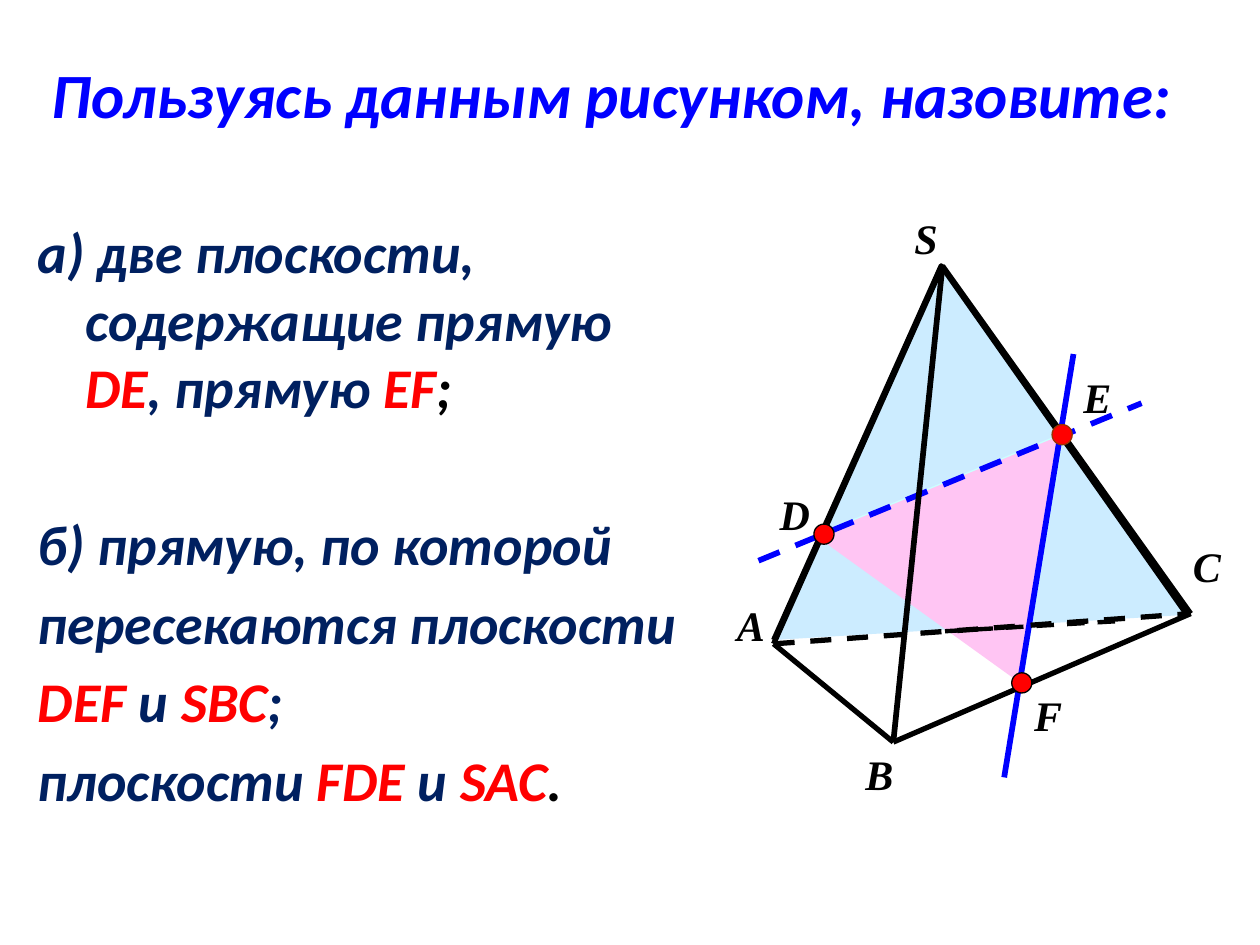
import pptx
import pptx.util
import pptx.dml.color
import pptx.enum.dml
import pptx.enum.shapes
import pptx.enum.text
import lxml.etree

theme = {
    "sans": "Calibri", "serif": "Times New Roman",
    "title": 36, "body": 32, "label": 24,
    "blue": "0000FF", "navy": "002060", "red": "FF0000", "black": "000000",
    "face": "CCECFF", "section": "FFC5F3", "rim": "CCFFFF", "brown": "993300",
}

deck = pptx.Presentation()
deck.slide_width = pptx.util.Inches(10)
deck.slide_height = pptx.util.Inches(7.5)
column = deck.slide_width / 100
row = deck.slide_height / 75
page = deck.slides.add_slide(deck.slide_layouts[1])


def grid(*lengths):
    return [int(length * (row if place % 2 else column)) for place, length in enumerate(lengths)]


def add_span(para, text, font, size, color):
    span = para.add_run()
    span.text = text
    span.font.name = theme[font]
    span.font.size = pptx.util.Pt(theme[size])
    span.font.bold = span.font.italic = True
    span.font.color.rgb = pptx.dml.color.RGBColor.from_string(theme[color])


title = page.shapes.title
title.left, title.top, title.width, title.height = grid(3.1, 3.9, 94.5, 7.1)
title.text_frame.auto_size = pptx.enum.text.MSO_AUTO_SIZE.NONE
title.text_frame.vertical_anchor = pptx.enum.text.MSO_ANCHOR.TOP
para = title.text_frame.paragraphs[0]
para.alignment = pptx.enum.text.PP_ALIGN.LEFT
add_span(para, "Пользуясь данным рисунком, назовите:", "sans", "title", "blue")

tasks = [
    (6.4, [("а) две плоскости, содержащие прямую ", "navy"), ("DE", "red"),
           (", прямую ", "navy"), ("EF", "red"), (";", "black")]),
    (51.5, [("б) прямую, по которой", "navy")]),
    (6.4, [("пересекаются плоскости", "navy")]),
    (6.4, [("DEF ", "red"), ("и ", "navy"), ("SBC", "red"), (";", "navy")]),
    (6.4, [("плоскости ", "navy"), ("FDE ", "red"), ("и ", "navy"), ("SAC", "red"), (".", "black")]),
]
body = page.placeholders[1]
body.left, body.top, body.width, body.height = grid(2, 16.8, 54.3, 53.4)
body.text_frame.auto_size = pptx.enum.text.MSO_AUTO_SIZE.NONE
for number, (gap, spans) in enumerate(tasks):
    para = body.text_frame.add_paragraph() if number else body.text_frame.paragraphs[0]
    para.space_before = pptx.util.Pt(gap)
    properties = para._p.get_or_add_pPr()
    properties.set("marL", str(int(3.75 * column)))
    properties.set("indent", str(int(-3.75 * column)))
    lxml.etree.SubElement(properties, pptx.oxml.ns.qn("a:buNone"))
    for text, color in spans:
        add_span(para, text, "sans", "body", color)

S, A, B, C = (74.8, 21.1), (61.4, 51.1), (70.9, 58.9), (94.5, 48.7)
D, E, F = (65.4, 42.4), (84.3, 34.5), (81.1, 54.2)

planes = [
    ([(61.4, 50.8), (74.7, 21.1), (94.2, 48.8)], "face", "black", 3),
    ([(64.7, 42.5), (84.4, 34.4), (81.1, 54.3)], "section", "rim", 0.75),
]
for corners, fill, outline, weight in planes:
    points = [grid(*corner) for corner in corners]
    builder = page.shapes.build_freeform(*points[0])
    builder.add_line_segments(points[1:], close=False)
    plane = builder.convert_to_shape()
    plane.shadow.inherit = False
    plane.fill.solid()
    plane.fill.fore_color.rgb = pptx.dml.color.RGBColor.from_string(theme[fill])
    plane.line.color.rgb = pptx.dml.color.RGBColor.from_string(theme[outline])
    plane.line.width = pptx.util.Pt(weight)

lines = [
    ((79.7, 61.7), (85.2, 28.1), "blue", 3.25, False),
    ((60.2, 44.5), (90.6, 32), "blue", 3.25, True),
    (S, A, "black", 3, False),
    (S, C, "black", 3, False),
    (A, C, "black", 3, True),
    (A, B, "black", 3, False),
    (B, C, "black", 3, False),
    (B, S, "black", 3.25, False),
    ((75, 50.1), (88.7, 49.3), "black", 2.5, True),
]
for start, end, color, weight, dashed in lines:
    edge = page.shapes.add_connector(
        pptx.enum.shapes.MSO_CONNECTOR.STRAIGHT, *grid(*start), *grid(*end))
    edge.line.color.rgb = pptx.dml.color.RGBColor.from_string(theme[color])
    edge.line.width = pptx.util.Pt(weight)
    if dashed:
        edge.line.dash_style = pptx.enum.dml.MSO_LINE.DASH
    lxml.etree.SubElement(edge._element.spPr, pptx.oxml.ns.qn("a:effectLst"))

diameter = 1.6
for (across, down), outline in [(D, "black"), (E, "brown"), (F, "black")]:
    dot = page.shapes.add_shape(
        pptx.enum.shapes.MSO_SHAPE.OVAL,
        *grid(across - diameter / 2, down - diameter / 2, diameter, diameter))
    dot.shadow.inherit = False
    dot.fill.solid()
    dot.fill.fore_color.rgb = pptx.dml.color.RGBColor.from_string(theme["red"])
    dot.line.color.rgb = pptx.dml.color.RGBColor.from_string(theme[outline])
    dot.line.width = pptx.util.Pt(0.75)

labels = [
    ("А", 57.5, 47.1, 4.7), ("С", 93.7, 42.4, 6.3), ("В", 67.7, 58.9, 7.1),
    ("S", 71.6, 16.4, 6.3), ("D", 60.9, 38.3, 6.3), ("F", 81.1, 54.2, 7.1),
    ("E", 85, 29, 6.3),
]
for letter, left, top, width in labels:
    box = page.shapes.add_textbox(*grid(left, top, width, 5))
    box.text_frame.word_wrap = True
    add_span(box.text_frame.paragraphs[0], letter, "serif", "label", "black")

deck.save("out.pptx")
